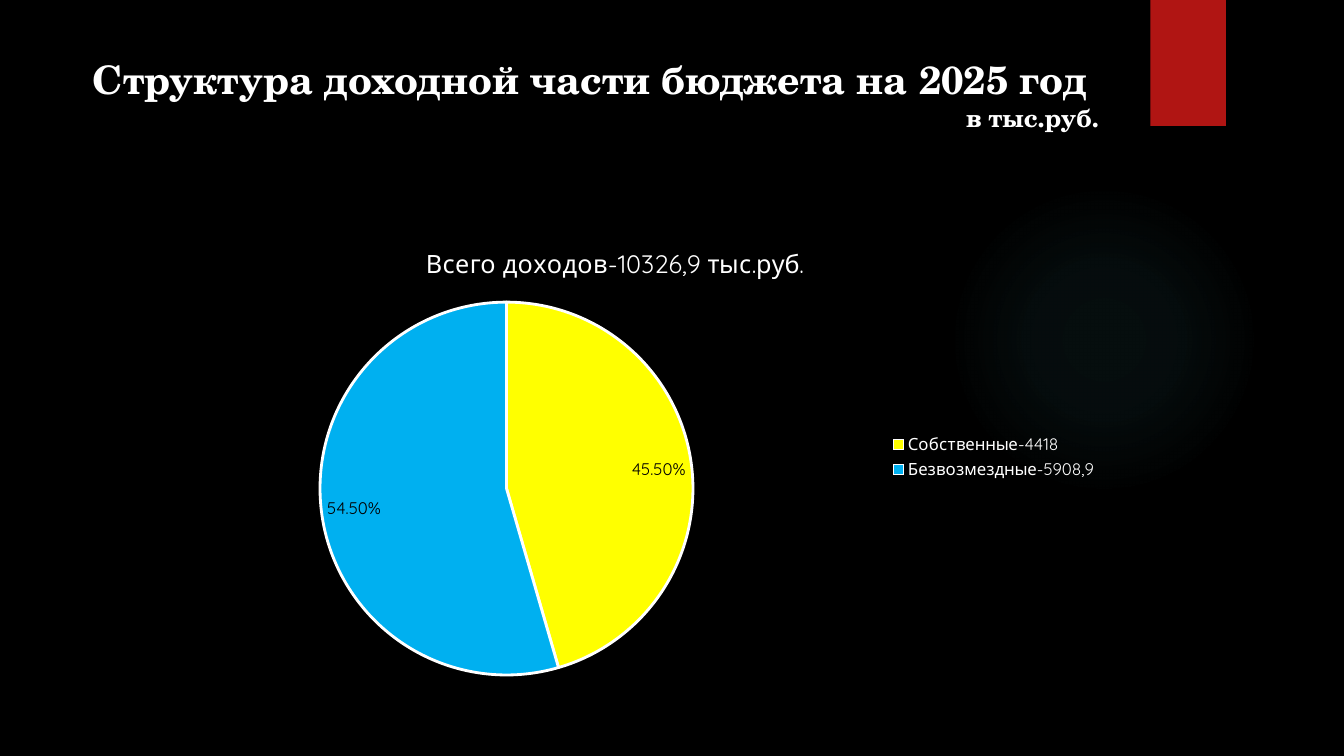
from lxml import etree
from pptx import Presentation
from pptx.chart.data import CategoryChartData
from pptx.dml.color import RGBColor
from pptx.enum.chart import XL_CHART_TYPE, XL_LABEL_POSITION, XL_LEGEND_POSITION
from pptx.enum.shapes import MSO_SHAPE
from pptx.enum.text import MSO_ANCHOR, MSO_AUTO_SIZE, PP_ALIGN
from pptx.oxml import parse_xml
from pptx.oxml.ns import nsdecls, qn
from pptx.util import Inches, Pt

PIE = XL_CHART_TYPE.PIE
BEST = XL_LABEL_POSITION.BEST_FIT
RIGHT = XL_LEGEND_POSITION.RIGHT
RECT, OVAL = MSO_SHAPE.RECTANGLE, MSO_SHAPE.OVAL

COLORS = {
    "black": "000000", "white": "FFFFFF", "red": "B01513",
    "glow": "50B9C1", "yellow": "FFFF00", "blue": "00B0F0",
}
HEAD = [
    ("Структура доходной части бюджета на 2025 год", 28, PP_ALIGN.CENTER),
    ("в тыс.руб.", 18, PP_ALIGN.RIGHT),
]
TOTAL = "Всего доходов-10326,9 тыс.руб."
PARTS = [
    ("Собственные-4418", 0.455, "yellow"),
    ("Безвозмездные-5908,9", 0.545, "blue"),
]
STOPS = [(0, 7), (36, 6), (69, 0)]
PLOT = {"x": 0.2, "y": 0.165, "w": 0.38, "h": 0.806}
BOXES = {
    "glow": (9.41, 1.83, 3.08, 3.08),
    "tab": (11.41, 0, 0.75, 1.25),
    "title": (0.71, 0.5, 10.29, 1.53),
    "chart": (1.21, 2.24, 9.78, 4.59),
}


def rgb(name):
    return RGBColor.from_string(COLORS[name])


def box(name):
    return [Inches(v) for v in BOXES[name]]


def style(font, size, color="white", face="Quicksand", bold=False):
    form = {"size": Pt(size), "name": face, "bold": bold}
    for key, val in form.items():
        setattr(font, key, val)
    font.color.rgb = rgb(color)


def add_block(slide, kind, name, color):
    shape = slide.shapes.add_shape(kind, *box(name))
    shape.shadow.inherit = False
    shape.fill.solid()
    shape.fill.fore_color.rgb = rgb(color)
    shape.line.fill.background()
    return shape


def add_glow(slide):
    shape = add_block(slide, OVAL, "glow", "glow")
    stops = "".join(
        f'<a:gs pos="{pos * 1000}"><a:srgbClr val="{COLORS["glow"]}">'
        f'<a:alpha val="{alpha * 1000}"/></a:srgbClr></a:gs>'
        for pos, alpha in STOPS
    )
    grad = parse_xml(
        f'<a:gradFill {nsdecls("a")}><a:gsLst>{stops}</a:gsLst>'
        '<a:path path="circle"><a:fillToRect l="50000" t="50000" '
        'r="50000" b="50000"/></a:path></a:gradFill>'
    )
    props = shape.element.spPr
    props.replace(props.find(qn("a:solidFill")), grad)


def add_title(slide):
    title = slide.shapes.title
    title.left, title.top, title.width, title.height = box("title")
    frame = title.text_frame
    form = {
        "word_wrap": True,
        "auto_size": MSO_AUTO_SIZE.NONE,
        "vertical_anchor": MSO_ANCHOR.TOP,
    }
    for key, val in form.items():
        setattr(frame, key, val)
    frame.text = "\n".join(text for text, _, _ in HEAD)
    for para, (_, size, align) in zip(frame.paragraphs, HEAD):
        para.alignment = align
        para.line_spacing = 1.0
        para.space_before = Pt(0)
        style(para.runs[0].font, size, face="TeX Gyre Schola", bold=True)


def place_plot(chart):
    area = chart.element.chart.plotArea
    old = area.find(qn("c:layout"))
    if old is not None:
        area.remove(old)
    layout = etree.Element(qn("c:layout"))
    area.insert(0, layout)
    manual = etree.SubElement(layout, qn("c:manualLayout"))
    rules = {"layoutTarget": "inner", "xMode": "edge", "yMode": "edge", **PLOT}
    for key, val in rules.items():
        etree.SubElement(manual, qn(f"c:{key}")).set("val", str(val))


def add_pie(slide):
    data = CategoryChartData(number_format="0.00%")
    data.categories = [name for name, _, _ in PARTS]
    data.add_series("Series 1", [val for _, val, _ in PARTS])
    chart = slide.shapes.add_chart(PIE, *box("chart"), data).chart
    style(chart.font, 10)
    chart.has_title = True
    chart.chart_title.text_frame.text = TOTAL
    style(chart.chart_title.text_frame.paragraphs[0].runs[0].font, 18)
    chart.has_legend = True
    chart.legend.position = RIGHT
    chart.legend.include_in_layout = False
    style(chart.legend.font, 12)

    plot = chart.plots[0]
    plot.vary_by_categories = True
    series = plot.series[0]
    for i, (_, _, color) in enumerate(PARTS):
        form = series.points[i].format
        form.fill.solid()
        form.fill.fore_color.rgb = rgb(color)
        form.line.color.rgb = rgb("white")
        form.line.width = Pt(2)
    labels = series.data_labels
    form = {
        "show_value": True,
        "show_percentage": False,
        "number_format": "0.00%",
        "number_format_is_linked": False,
        "position": BEST,
    }
    for key, val in form.items():
        setattr(labels, key, val)
    style(labels.font, 12, "black")
    place_plot(chart)


def main():
    deck = Presentation()
    deck.slide_width, deck.slide_height = Inches(13.33), Inches(7.5)
    slide = deck.slides.add_slide(deck.slide_layouts[5])
    slide.background.fill.solid()
    slide.background.fill.fore_color.rgb = rgb("black")
    add_glow(slide)
    add_block(slide, RECT, "tab", "red")
    add_title(slide)
    add_pie(slide)
    deck.save("out.pptx")


if __name__ == "__main__":
    main()
